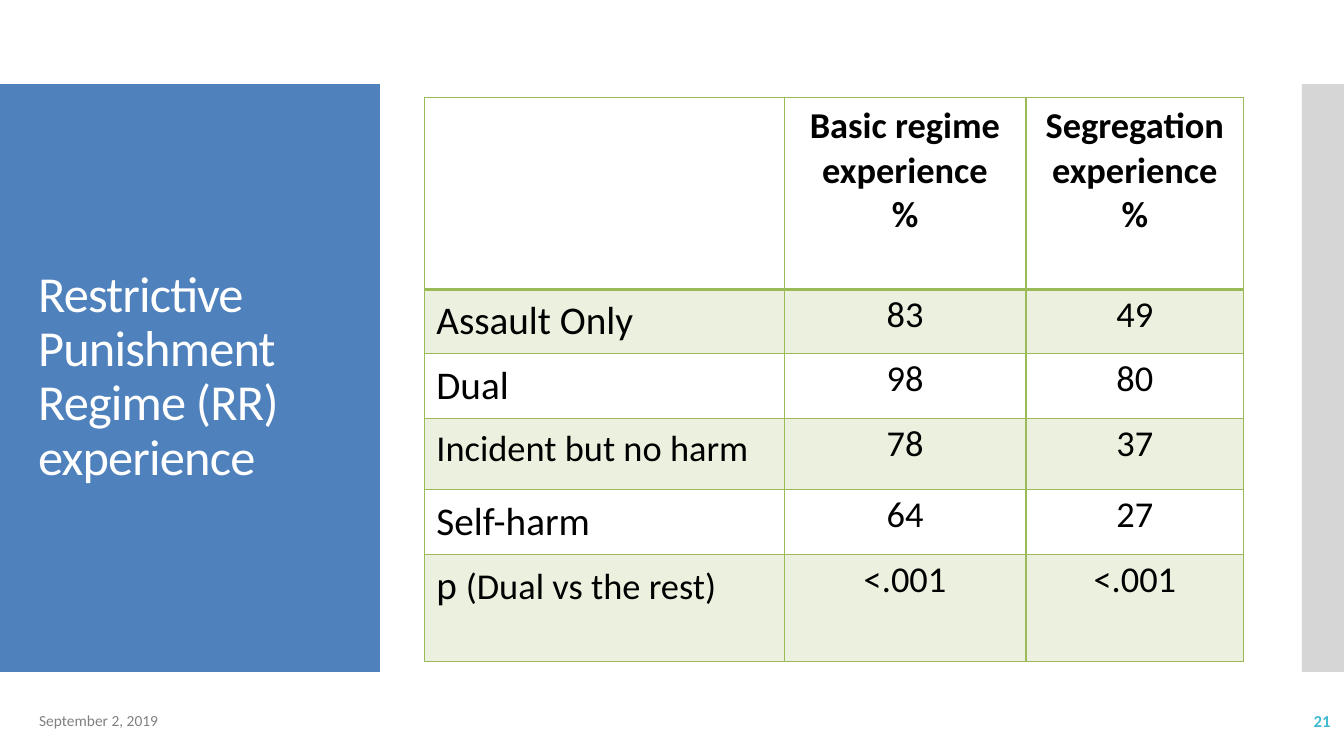
import lxml.etree
import pptx
import pptx.dml.color
import pptx.enum.shapes
import pptx.enum.text
import pptx.oxml.ns
import pptx.util

COLORS = {
    "panel": "4F81BD", "strip": "D6D6D6", "title": "FFFFFF", "date": "808080",
    "number": "40BAD2", "text": "000000", "border": "9BBB59", "band": "EBF1DE",
}
FONT = "Calibri"
CELL = pptx.util.Inches(1 / 12)
ALIGN = pptx.enum.text.PP_ALIGN
MIDDLE = pptx.enum.text.MSO_ANCHOR.MIDDLE
COLUMN_WIDTHS = [42.84, 28.8, 25.92]
ROW_HEIGHTS = [22.8, 7.68, 7.68, 8.52, 7.68, 12.72]
HEADERS = ["Basic regime experience", "Segregation experience"]
RESULTS = [
    ([("Assault Only", 28)], "83", "49"),
    ([("Dual", 28)], "98", "80"),
    ([("Incident but no harm", 26)], "78", "37"),
    ([("Self-harm", 28)], "64", "27"),
    ([("p ", 28), ("(Dual vs the rest)", 26)], "<.001", "<.001"),
]
HEADER_FORMAT = {"alignment": ALIGN.CENTER}
VALUE_FORMAT = {"alignment": ALIGN.CENTER, "line_spacing": 1.07, "space_after": pptx.util.Pt(8)}
FOOTER_FORMAT = {"space_after": pptx.util.Pt(6)}


def grid(*cells):
    return [round(cell * CELL) for cell in cells]


def apply_format(target, values):
    for name, value in values.items():
        setattr(target, name, value)


def color(name):
    return pptx.dml.color.RGBColor.from_string(COLORS[name])


def write(paragraph, runs, paragraph_format, color_name="text", bold=False):
    apply_format(paragraph, paragraph_format)
    for text, size in runs:
        run = paragraph.add_run()
        run.text = text
        apply_format(run.font, {"name": FONT, "size": pptx.util.Pt(size), "bold": bold})
        run.font.color.rgb = color(color_name)


def add_block(slide, box, color_name):
    shape = slide.shapes.add_shape(pptx.enum.shapes.MSO_SHAPE.RECTANGLE, *grid(*box))
    shape.shadow.inherit = False
    shape.fill.solid()
    shape.fill.fore_color.rgb = color(color_name)
    shape.line.fill.background()


def add_text(slide, box, text, size, paragraph_format, color_name, bold=False):
    frame = slide.shapes.add_textbox(*grid(*box)).text_frame
    apply_format(frame, {"word_wrap": True, "vertical_anchor": MIDDLE})
    write(frame.paragraphs[0], [(text, size)], paragraph_format, color_name, bold)
    return frame.paragraphs[0]


def set_borders(cell, bottom_width):
    properties = cell._tc.get_or_add_tcPr()
    for side, width in {"L": 1, "R": 1, "T": 1, "B": bottom_width}.items():
        line = lxml.etree.SubElement(
            properties, pptx.oxml.ns.qn(f"a:ln{side}"), w=str(pptx.util.Pt(width)))
        fill = lxml.etree.SubElement(line, pptx.oxml.ns.qn("a:solidFill"))
        lxml.etree.SubElement(fill, pptx.oxml.ns.qn("a:srgbClr"), val=COLORS["border"])


def style_cell(cell, row):
    set_borders(cell, 2 if row == 0 else 1)
    if row % 2:
        cell.fill.solid()
        cell.fill.fore_color.rgb = color("band")
    else:
        cell.fill.background()


def set_margins(cell, horizontal, vertical):
    sides = {"left": horizontal, "right": horizontal, "top": vertical, "bottom": vertical}
    apply_format(cell, {f"margin_{side}": pptx.util.Inches(inset) for side, inset in sides.items()})


def add_results_table(slide, left, top):
    box = grid(left, top, sum(COLUMN_WIDTHS), sum(ROW_HEIGHTS))
    table = slide.shapes.add_table(len(ROW_HEIGHTS), len(COLUMN_WIDTHS), *box).table
    table.horz_banding = False
    for column, width in zip(table.columns, grid(*COLUMN_WIDTHS)):
        column.width = width
    for index, (row, height) in enumerate(zip(table.rows, grid(*ROW_HEIGHTS))):
        row.height = height
        for cell in row.cells:
            style_cell(cell, index)
    for column, header in enumerate(HEADERS, 1):
        cell = table.cell(0, column)
        set_margins(cell, 0.1, 0.06)
        frame = cell.text_frame
        write(frame.paragraphs[0], [(header, 26)], HEADER_FORMAT, bold=True)
        write(frame.add_paragraph(), [("%", 26)], HEADER_FORMAT, bold=True)
    for row, (label, *values) in enumerate(RESULTS, 1):
        label_cell = table.cell(row, 0)
        set_margins(label_cell, 0.12, 0.08)
        write(label_cell.text_frame.paragraphs[0], label, {})
        for column, value in enumerate(values, 1):
            cell = table.cell(row, column)
            set_margins(cell, 0, 0)
            write(cell.text_frame.paragraphs[0], [(value, 26)], VALUE_FORMAT)


def main():
    """Build the slide on a grid of 160 columns by 90 rows."""
    presentation = pptx.Presentation()
    presentation.slide_width, presentation.slide_height = grid(160, 90)
    slide = presentation.slides.add_slide(presentation.slide_layouts[6])
    add_block(slide, (0, 10, 45.24, 70), "panel")
    add_block(slide, (155, 10, 5, 70), "strip")
    title = add_text(slide, (3.36, 14.76, 38.64, 60.36),
                     "Restrictive Punishment Regime (RR) experience", 36,
                     {"line_spacing": 0.9}, "title")
    title.runs[0].font._element.set("spc", "-60")
    add_text(slide, (3.48, 83.4, 36, 4.8), "September 2, 2019", 11, FOOTER_FORMAT, "date")
    add_text(slide, (139.56, 83.4, 20.04, 4.8), "21", 12,
             {**FOOTER_FORMAT, "alignment": ALIGN.RIGHT}, "number", bold=True)
    add_results_table(slide, 50.52, 11.64)
    presentation.save("out.pptx")


if __name__ == "__main__":
    main()
